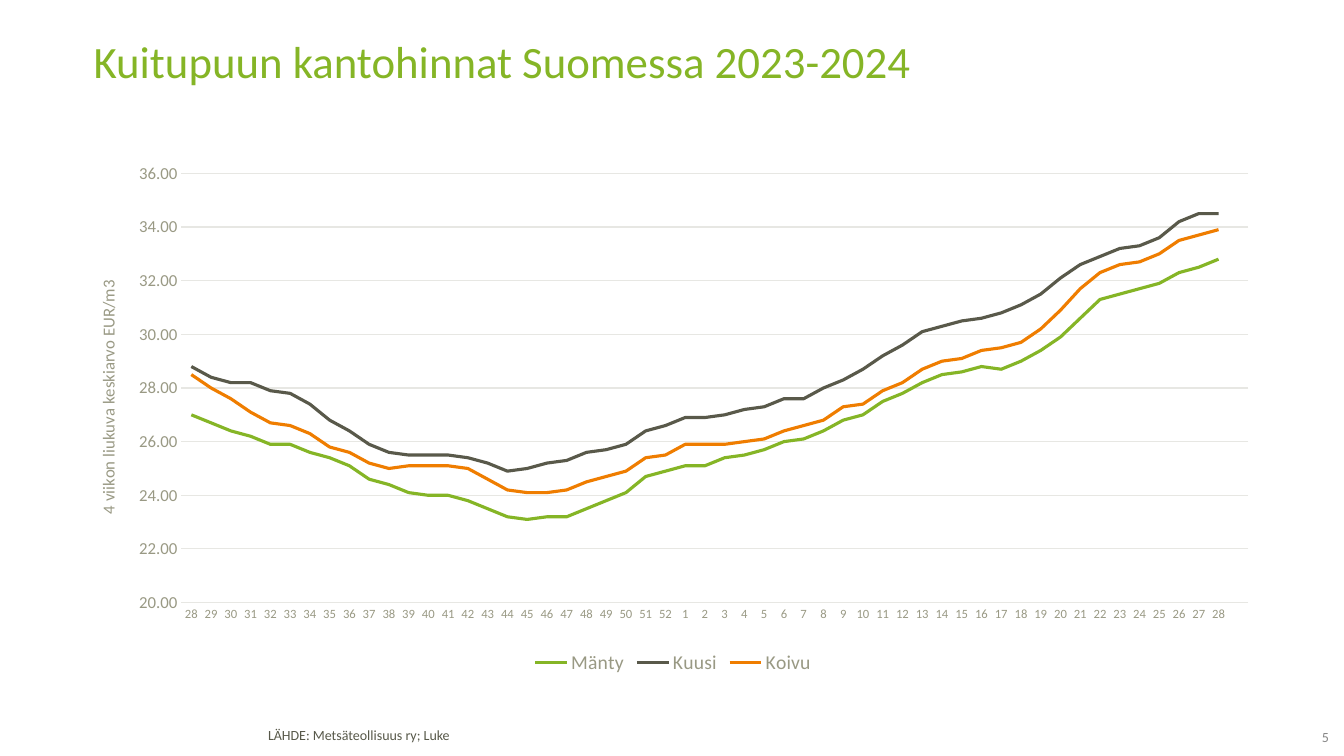
import pptx
import pptx.chart.data
import pptx.dml.color
import pptx.enum.chart
import pptx.enum.text
import pptx.oxml
import pptx.oxml.ns
import pptx.util

PX = 9144
CHART_WIDTH = 1169
CHART_HEIGHT = 516
FONT = "Calibri"
GREEN = pptx.dml.color.RGBColor(0x85, 0xB5, 0x26)
DARK = pptx.dml.color.RGBColor(0x59, 0x59, 0x4A)
ORANGE = pptx.dml.color.RGBColor(0xEF, 0x7D, 0x00)
SOURCE_TEXT = pptx.dml.color.RGBColor(0x58, 0x59, 0x4A)
NUMBER_TEXT = pptx.dml.color.RGBColor(0x87, 0x87, 0x87)
AXIS_TEXT = pptx.dml.color.RGBColor(0x99, 0x99, 0x84)
GRID = pptx.dml.color.RGBColor(0xE7, 0xE7, 0xE3)

presentation = pptx.Presentation()
presentation.slide_width = 1333 * PX
presentation.slide_height = 750 * PX
slide = presentation.slides.add_slide(presentation.slide_layouts[6])


def add_text(text, box, size, color, spacing=1.0, insets=(10, 5, 10, 5),
             align=pptx.enum.text.PP_ALIGN.LEFT, anchor=pptx.enum.text.MSO_ANCHOR.TOP):
    frame = slide.shapes.add_textbox(*(length * PX for length in box)).text_frame
    frame.word_wrap = True
    frame.vertical_anchor = anchor
    frame.margin_left, frame.margin_top, frame.margin_right, frame.margin_bottom = (
        inset * PX for inset in insets)
    paragraph = frame.paragraphs[0]
    paragraph.alignment = align
    paragraph.line_spacing = spacing
    run = paragraph.add_run()
    run.text = text
    run.font.name = FONT
    run.font.size = pptx.util.Pt(size)
    run.font.color.rgb = color


def set_layout(parent, index, **values):
    tag = pptx.oxml.ns.qn("c:layout")
    for layout in parent.findall(tag):
        parent.remove(layout)
    items = "".join(f'<c:{name} val="{value}"/>' for name, value in values.items())
    parent.insert(index, pptx.oxml.parse_xml(
        f'<c:layout {pptx.oxml.ns.nsdecls("c")}><c:manualLayout>{items}'
        '</c:manualLayout></c:layout>'))


add_text("LÄHDE: Metsäteollisuus ry; Luke", (256, 718, 718, 27), 10, SOURCE_TEXT, spacing=0.85)
add_text("5", (1265, 724, 53, 19), 10, NUMBER_TEXT, insets=(0, 0, 0, 4),
         align=pptx.enum.text.PP_ALIGN.RIGHT, anchor=pptx.enum.text.MSO_ANCHOR.MIDDLE)
add_text("Kuitupuun kantohinnat Suomessa 2023-2024", (83, 39, 1169, 98), 32, GREEN, spacing=0.8)

prices = [
    ("Mänty", GREEN, [
        27, 26.7, 26.4, 26.2, 25.9, 25.9, 25.6, 25.4, 25.1, 24.6, 24.4, 24.1, 24, 24,
        23.8, 23.5, 23.2, 23.1, 23.2, 23.2, 23.5, 23.8, 24.1, 24.7, 24.9, 25.1, 25.1,
        25.4, 25.5, 25.7, 26, 26.1, 26.4, 26.8, 27, 27.5, 27.8, 28.2, 28.5, 28.6, 28.8,
        28.7, 29, 29.4, 29.9, 30.6, 31.3, 31.5, 31.7, 31.9, 32.3, 32.5, 32.8]),
    ("Kuusi", DARK, [
        28.8, 28.4, 28.2, 28.2, 27.9, 27.8, 27.4, 26.8, 26.4, 25.9, 25.6, 25.5, 25.5, 25.5,
        25.4, 25.2, 24.9, 25, 25.2, 25.3, 25.6, 25.7, 25.9, 26.4, 26.6, 26.9, 26.9,
        27, 27.2, 27.3, 27.6, 27.6, 28, 28.3, 28.7, 29.2, 29.6, 30.1, 30.3, 30.5, 30.6,
        30.8, 31.1, 31.5, 32.1, 32.6, 32.9, 33.2, 33.3, 33.6, 34.2, 34.5, 34.5]),
    ("Koivu", ORANGE, [
        28.5, 28, 27.6, 27.1, 26.7, 26.6, 26.3, 25.8, 25.6, 25.2, 25, 25.1, 25.1, 25.1,
        25, 24.6, 24.2, 24.1, 24.1, 24.2, 24.5, 24.7, 24.9, 25.4, 25.5, 25.9, 25.9,
        25.9, 26, 26.1, 26.4, 26.6, 26.8, 27.3, 27.4, 27.9, 28.2, 28.7, 29, 29.1, 29.4,
        29.5, 29.7, 30.2, 30.9, 31.7, 32.3, 32.6, 32.7, 33, 33.5, 33.7, 33.9]),
]
weeks = [str(week) for week in [*range(28, 53), *range(1, 29)]]

chart_data = pptx.chart.data.CategoryChartData(number_format="#,##0.00")
chart_data.categories = weeks + [""]
for name, color, values in prices:
    chart_data.add_series(name, values + [None])
chart = slide.shapes.add_chart(
    pptx.enum.chart.XL_CHART_TYPE.LINE, 83 * PX, 157 * PX,
    CHART_WIDTH * PX, CHART_HEIGHT * PX, chart_data).chart
chart.has_title = False
chart.font.name = FONT
chart.font.size = pptx.util.Pt(10)
chart.font.color.rgb = DARK
chart.plots[0].vary_by_categories = False
for series, (name, color, values) in zip(chart.plots[0].series, prices):
    series.smooth = False
    series.marker.style = pptx.enum.chart.XL_MARKER_STYLE.NONE
    series.format.line.color.rgb = color
    series.format.line.width = pptx.util.Pt(2.25)

chart.has_legend = True
chart.legend.position = pptx.enum.chart.XL_LEGEND_POSITION.BOTTOM
chart.legend.include_in_layout = False
week_axis = chart.category_axis
price_axis = chart.value_axis
price_axis.minimum_scale = 20
price_axis.maximum_scale = 36
price_axis.major_unit = 2
price_axis.has_major_gridlines = True
price_axis.tick_labels.number_format = "#,##0.00"
price_axis.tick_labels.number_format_is_linked = False
price_axis.format.line.fill.background()
for axis in (week_axis, price_axis):
    axis.major_tick_mark = pptx.enum.chart.XL_TICK_MARK.NONE
    axis.minor_tick_mark = pptx.enum.chart.XL_TICK_MARK.NONE
for line in (week_axis.format.line, price_axis.major_gridlines.format.line):
    line.color.rgb = GRID
    line.width = pptx.util.Pt(0.75)

title_frame = price_axis.axis_title.text_frame
title_frame.text = "4 viikon liukuva keskiarvo EUR/m3"
title_font = title_frame.paragraphs[0].runs[0].font
title_font.bold = False
for font, size in ((week_axis.tick_labels.font, 9), (price_axis.tick_labels.font, 12),
                   (title_font, 12), (chart.legend.font, 14)):
    font.name = FONT
    font.size = pptx.util.Pt(size)
    font.color.rgb = AXIS_TEXT

plot_area = chart.element.find(".//" + pptx.oxml.ns.qn("c:plotArea"))
axis_title = plot_area.find(".//" + pptx.oxml.ns.qn("c:title"))
title_body = axis_title.find(".//" + pptx.oxml.ns.qn("a:bodyPr"))
title_body.set("rot", "-5400000")
title_body.set("vert", "horz")
set_layout(axis_title, 1, xMode="edge", yMode="edge",
           x=10 / CHART_WIDTH, y=118 / CHART_HEIGHT)
set_layout(plot_area, 0, layoutTarget="inner", xMode="edge", yMode="edge",
           x=97 / CHART_WIDTH, y=15 / CHART_HEIGHT,
           w=1058 / CHART_WIDTH, h=426 / CHART_HEIGHT)

presentation.save("out.pptx")
